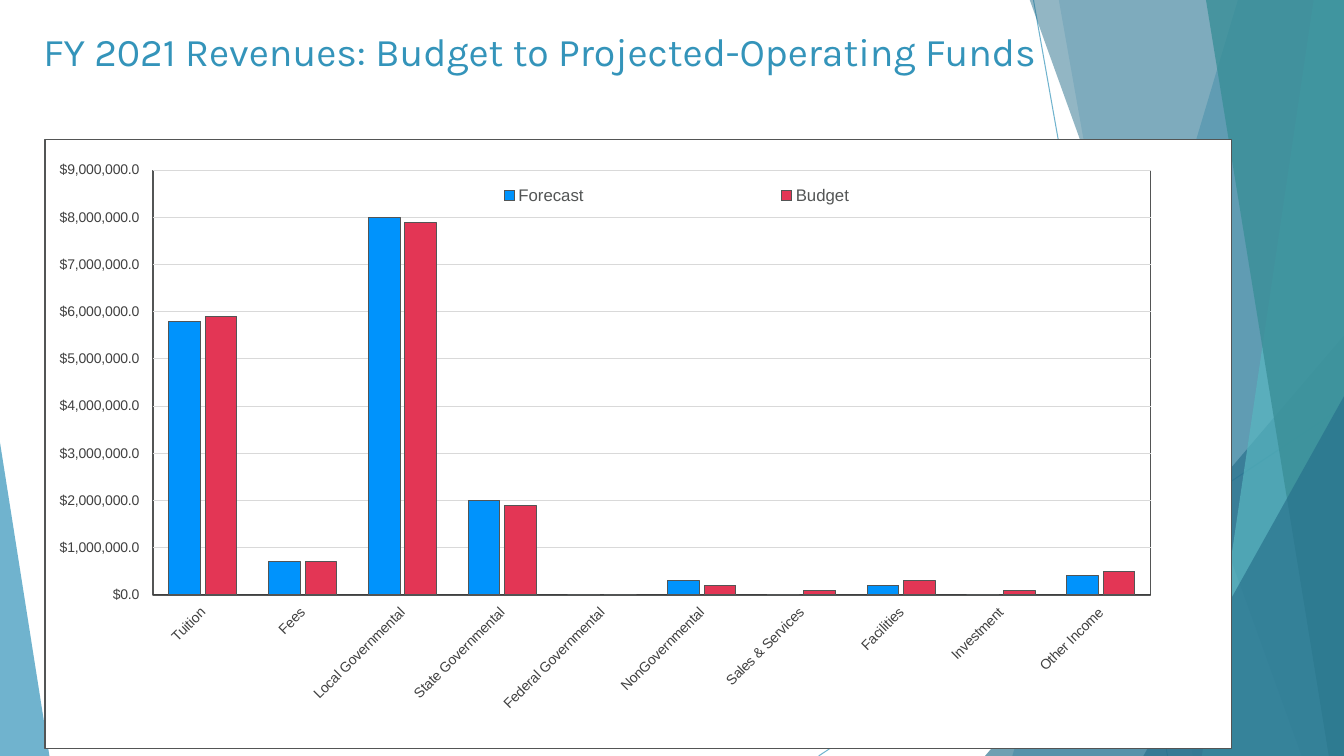
from lxml import etree
from pptx import Presentation
from pptx.chart.data import CategoryChartData
from pptx.dml.color import RGBColor
from pptx.enum.chart import (XL_CHART_TYPE, XL_LEGEND_POSITION, XL_TICK_LABEL_POSITION,
                             XL_TICK_MARK)
from pptx.enum.shapes import MSO_CONNECTOR, MSO_SHAPE
from pptx.enum.text import MSO_ANCHOR, PP_ALIGN
from pptx.oxml import parse_xml
from pptx.oxml.ns import nsdecls, qn
from pptx.util import Inches, Pt

C = {"blue": "3494BA", "navy": "276F8B", "aqua": "58B6C0", "teal": "3A8F98",
     "forecast": "0093FC", "budget": "E33655", "edge": "535555",
     "label": "404040", "grid": "D9D9D9", "white": "FFFFFF"}
W, H, TOP = 13.33, 7.5, -0.01


def paint(fmt, color, alpha=100):
    """Give a fill a solid colour with an opacity in percent."""
    fmt.solid()
    fmt.fore_color.rgb = RGBColor.from_string(C[color])
    if alpha < 100:
        clr = fmt._xPr.find(qn("a:solidFill"))[0]
        etree.SubElement(clr, qn("a:alpha"), val=str(alpha * 1000))


def style_font(font, name, size, color):
    font.name, font.size, font.bold = name, Pt(size), False
    font.color.rgb = RGBColor.from_string(C[color])


prs = Presentation()
prs.slide_width, prs.slide_height = Inches(W), Inches(H)
s = prs.slides.add_slide(prs.slide_layouts[5])

# Thin diagonal lines
for ends in [(10.25, 0, 11.58, H), (W, 4.03, 8.12, H)]:
    line = s.shapes.add_connector(MSO_CONNECTOR.STRAIGHT, *map(Inches, ends))
    line.line.width = Pt(0.75)
    paint(line.line.fill, "blue", 70)
    etree.SubElement(line._element.spPr, qn("a:effectLst"))

# Translucent facets: bands run to the right edge from top x to bottom x,
# triangles are (left, top, width, apex position)
facets = [
    ("band", (12.28, 10.04), "blue", 36),
    ("band", (10.5, 11.83), "blue", 20),
    ("triangle", (9.77, 3.33, 3.56, 1), "navy", 66),
    ("band", (10.21, 12.91), "navy", 50),
    ("band", (13.03, 11.92), "aqua", 70),
    ("band", (11.96, 13.18), "teal", 80),
    ("triangle", (11.34, 3.93, 1.99, 1), "navy", 66),
    ("triangle", (0, 4.39, 0.49, 0), "blue", 70),
]
for kind, geometry, color, alpha in facets:
    if kind == "band":
        x_top, x_bottom = geometry
        corners = [(W, TOP), (W, H), (x_bottom, H)]
        outline = s.shapes.build_freeform(Inches(x_top), Inches(TOP))
        outline.add_line_segments([(Inches(x), Inches(y)) for x, y in corners])
        sp = outline.convert_to_shape()
    else:
        x, y, width, apex = geometry
        sp = s.shapes.add_shape(MSO_SHAPE.ISOSCELES_TRIANGLE, Inches(x), Inches(y),
                                Inches(width), Inches(H - y))
        sp.adjustments[0] = apex
    paint(sp.fill, color, alpha)
    sp.line.fill.background()
    sp.shadow.inherit = False

# Title, in front of the facets
title = s.shapes.title
s.shapes._spTree.append(title._element)
title.left, title.top, title.width, title.height = map(Inches, (0.33, 0.22, 11.45, 0.89))
tf = title.text_frame
tf.text = "FY 2021 Revenues: Budget to Projected-Operating Funds"
tf.vertical_anchor = MSO_ANCHOR.TOP
p = tf.paragraphs[0]
p.alignment = PP_ALIGN.LEFT
style_font(p.font, "Karla", 28, "blue")

# Revenue chart, values in dollars
revenues = [
    ("Tuition", 5800000, 5900000),
    ("Fees", 700000, 700000),
    ("Local Governmental", 8000000, 7900000),
    ("State Governmental", 2000000, 1900000),
    ("Federal Governmental", 0, 0),
    ("NonGovernmental", 300000, 200000),
    ("Sales & Services", 0, 100000),
    ("Facilities", 200000, 300000),
    ("Investment", 0, 100000),
    ("Other Income", 400000, 500000),
]
categories, forecast, budget = zip(*revenues)
data = CategoryChartData()
data.categories = categories
data.add_series("Forecast", forecast)
data.add_series("Budget", budget)
chart = s.shapes.add_chart(XL_CHART_TYPE.COLUMN_CLUSTERED, Inches(0.44), Inches(1.38),
                           Inches(11.78), Inches(6.05), data).chart
chart.has_title = False
style_font(chart.font, "Arial", 10, "label")

plot = chart.plots[0]
plot.gap_width, plot.overlap, plot.vary_by_categories = 100, -15, False
for series, color in zip(plot.series, ("forecast", "budget")):
    paint(series.format.fill, color)
    paint(series.format.line.fill, "edge")
    series.format.line.width = Pt(0.75)
    series.invert_if_negative = False

# Axes
cat, val = chart.category_axis, chart.value_axis
for axis in (cat, val):
    style_font(axis.tick_labels.font, "Arial", 10, "label")
cat.major_tick_mark = XL_TICK_MARK.NONE
cat.tick_label_position = XL_TICK_LABEL_POSITION.LOW
paint(cat.format.line.fill, "label")
cat.format.line.width = Pt(1)
cat._element.find(qn("c:txPr")).find(qn("a:bodyPr")).set("rot", "-2700000")
val.minimum_scale, val.maximum_scale, val.major_unit = 0, 9000000, 1000000
val.major_tick_mark = XL_TICK_MARK.OUTSIDE
val.format.line.fill.background()
val.tick_labels.number_format = r'"$"#,##0.0_);[Red]\("$"#,##0.0\)'
val.tick_labels.number_format_is_linked = False
grid = val.major_gridlines.format.line
paint(grid.fill, "grid")
grid.width = Pt(0.75)

# Legend inside the top of the plot
chart.has_legend = True
legend = chart.legend
legend.position = XL_LEGEND_POSITION.BOTTOM
legend.include_in_layout = True
style_font(legend.font, "Arial", 12, "edge")

# Plot and legend places, as shares of the chart
plot_area = chart._chartSpace.chart.plotArea
for parent, target, box in [(plot_area, '<c:layoutTarget val="inner"/>', (0.091, 0.05, 0.841, 0.698)),
                            (legend._element, "", (0.225, 0.062, 0.615, 0.06))]:
    for old in parent.findall(qn("c:layout")):
        parent.remove(old)
    modes = '<c:xMode val="edge"/><c:yMode val="edge"/>'
    sizes = "".join(f'<c:{k} val="{v}"/>' for k, v in zip("xywh", box))
    layout = parse_xml(f'<c:layout {nsdecls("c")}><c:manualLayout>{target}{modes}{sizes}'
                       '</c:manualLayout></c:layout>')
    parent.insert(0 if target else 1, layout)

# Frames of the plot and of the whole chart
frame = (f'<c:spPr {nsdecls("c", "a")}>%s<a:ln w="12700"><a:solidFill>'
         f'<a:srgbClr val="{C["edge"]}"/></a:solidFill></a:ln></c:spPr>')
plot_area.append(parse_xml(frame % "<a:noFill/>"))
white = f'<a:solidFill><a:srgbClr val="{C["white"]}"/></a:solidFill>'
chart._chartSpace.chart.addnext(parse_xml(frame % white))

prs.save("out.pptx")
